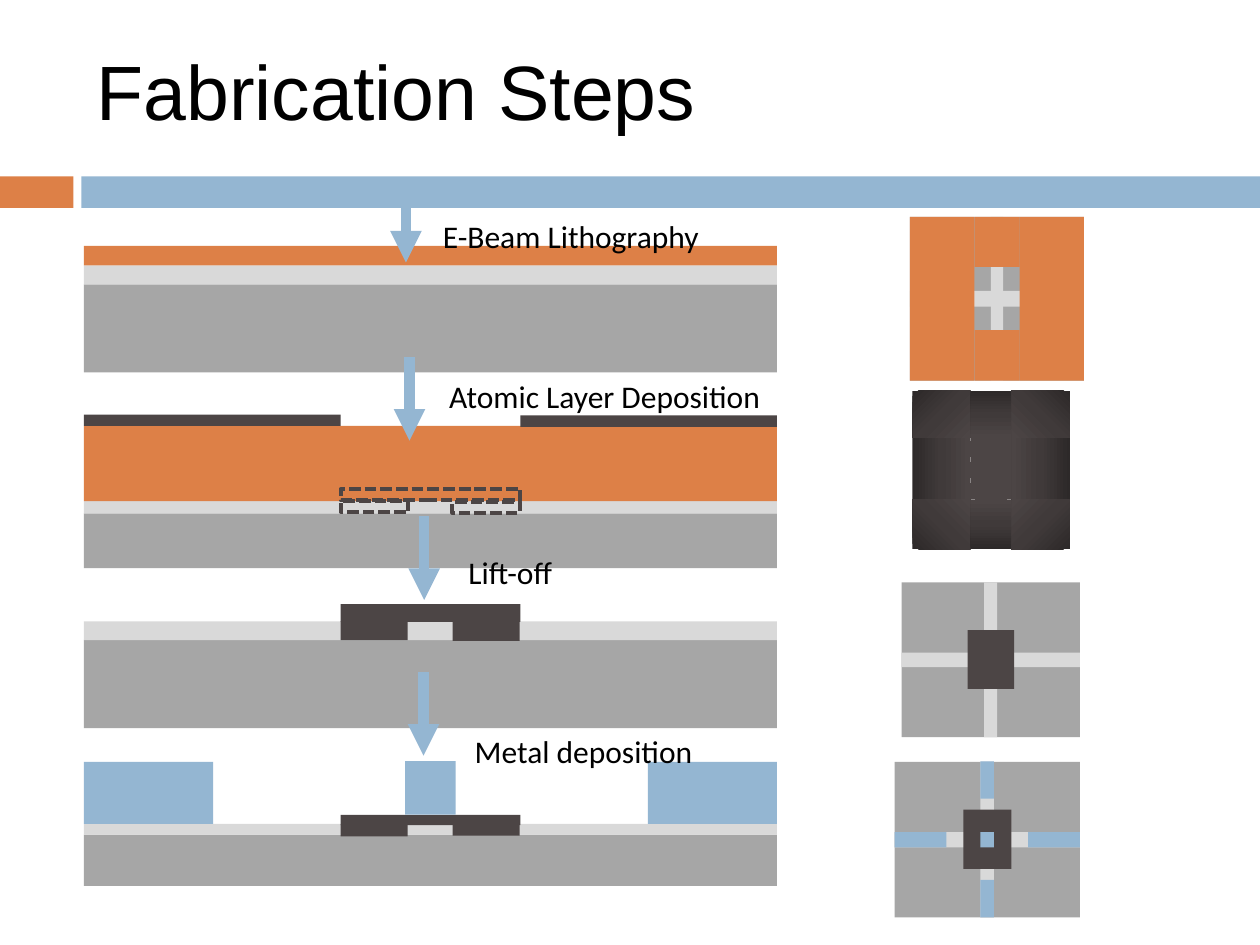
from lxml import etree
from pptx import Presentation
from pptx.dml.color import RGBColor
from pptx.enum.dml import MSO_LINE
from pptx.enum.shapes import MSO_CONNECTOR, MSO_SHAPE
from pptx.enum.text import MSO_ANCHOR, MSO_AUTO_SIZE, PP_ALIGN
from pptx.oxml import parse_xml
from pptx.oxml.ns import nsdecls, qn
from pptx.util import Pt

COLORS = {
    "resist": "DD8047", "metal": "94B6D2", "silicon": "A6A6A6",
    "device": "D9D9D9", "ald": "4C4545", "text": "000000",
}
SHADE = [(0, "2D2929"), (50, "403A3A"), (100, "4C4545")]

# Side views: full-width layers (material, top, height), then
# smaller parts (material, left, top, width, height)
SIDE_LEFT, SIDE_WIDTH = 48, 396
GATE_LEFT, GATE_WIDTH = 194.6, 102.8
RIGHT_LEG = 258.6
SIDE_VIEWS = [
    ([("silicon", 162.5, 50.4), ("device", 151.7, 10.8), ("resist", 140.6, 11.1)], []),
    ([("silicon", 293.4, 31.3), ("device", 286.4, 7), ("resist", 243.4, 43)],
     [("ald", SIDE_LEFT, 236.9, 146.7, 6.5), ("ald", 297.4, 237.4, 146.6, 6.5),
      ("outline", GATE_LEFT, 279.4, GATE_WIDTH, 6.5),
      ("outline", GATE_LEFT, 286.5, 38.8, 6), ("outline", 258.4, 287, 38.8, 6)]),
    ([("silicon", 365.7, 50.4), ("device", 355, 10.8)],
     [("ald", GATE_LEFT, 345.3, GATE_WIDTH, 10.1),
      ("ald", GATE_LEFT, 355, 38.4, 10.8), ("ald", RIGHT_LEG, 355.5, 38.4, 10.8)]),
    ([("silicon", 476.9, 29.4), ("device", 470.8, 6.2)],
     [("ald", GATE_LEFT, 465.7, GATE_WIDTH, 5.8),
      ("ald", GATE_LEFT, 471, 38.4, 7), ("ald", RIGHT_LEG, 471, 38.4, 6.5),
      ("metal", SIDE_LEFT, 435.4, 73.8, 35.4), ("metal", 370.2, 435.4, 73.8, 35.4),
      ("metal", 231.6, 435, 28.8, 30.5)]),
]

# Top views: chip (left, top, width, height), horizontal wire (top, height),
# vertical wire (left, width), then the parts on top
TOP_VIEWS = [
    ((520, 124, 99.4, 93.6), (166.3, 8.9), (566.2, 7.1),
     [("resist", 520, 124, 36.9, 93.6), ("resist", 582.7, 124, 36.7, 93.6),
      ("resist", 556.9, 124, 25.8, 28.6), ("resist", 556.9, 188.6, 25.8, 29)]),
    ((515.2, 332.8, 101.9, 88.4), (372.9, 8.3), (562.4, 7.4),
     [("ald", 552.9, 360, 26.6, 33.7)]),
    ((511.2, 435.4, 105.9, 88.9), (475.5, 8.7), (560.2, 7.7),
     [("ald", 550.5, 462.7, 27.4, 33.9),
      ("metal", 511.2, 475.5, 29.6, 8.7), ("metal", 587.5, 475.5, 29.6, 8.7),
      ("metal", 560.2, 435, 7.7, 21.4), ("metal", 560.2, 502.8, 7.7, 21.4),
      ("metal", 560.2, 475.5, 7.7, 8.7)]),
]

# Coated top view: grid edges and the shading angle of each cell
COAT_X = [521.3, 554.5, 578, 611.4]
COAT_Y = [223.2, 250.3, 285.6, 314]
COAT_ANGLES = [[45, 90, 135], [0, None, 180], [315, 270, 225]]

# Steps: label, arrow x, arrow top, label left, label top, label width
ARROW_LENGTH = 47.8
STEPS = [
    ("E-Beam Lithography", 232, 102.2, 246, 120.4, 168),
    ("Atomic Layer Deposition", 234, 204, 249.6, 212, 204),
    ("Lift-off", 242.4, 295, 260.6, 312.6, 70),
    ("Metal deposition", 242, 384, 264.2, 414.9, 149),
]


def rgb(name):
    return RGBColor.from_string(COLORS[name])


def dash(rect, width):
    rect.line.color.rgb = rgb("ald")
    rect.line.width = Pt(width)
    rect.line.dash_style = MSO_LINE.SQUARE_DOT


def add_rect(shapes, material, *box):
    rect = shapes.add_shape(MSO_SHAPE.RECTANGLE, *map(Pt, box))
    rect.shadow.inherit = False
    if material == "outline":
        rect.fill.background()
        dash(rect, 2.25)
    else:
        rect.fill.solid()
        rect.fill.fore_color.rgb = rgb(material)
        rect.line.fill.background()
    return rect


def shade(rect, angle):
    stops = "".join(f'<a:gs pos="{pos * 1000}"><a:srgbClr val="{color}"/></a:gs>'
                    for pos, color in SHADE)
    gradient = parse_xml(f'<a:gradFill {nsdecls("a")} rotWithShape="1"><a:gsLst>{stops}</a:gsLst>'
                         f'<a:lin ang="{angle * 60000}" scaled="0"/></a:gradFill>')
    properties = rect._element.spPr
    properties.replace(properties.find(qn("a:solidFill")), gradient)


def add_arrow(shapes, x, top):
    arrow = shapes.add_connector(MSO_CONNECTOR.STRAIGHT, Pt(x), Pt(top), Pt(x), Pt(top + ARROW_LENGTH))
    arrow.line.color.rgb = rgb("metal")
    arrow.line.width = Pt(6)
    etree.SubElement(arrow.line._get_or_add_ln(), qn("a:tailEnd"), type="triangle")
    etree.SubElement(arrow._element.spPr, qn("a:effectLst"))


def set_font(paragraph, name, size):
    paragraph.font.name = name
    paragraph.font.size = Pt(size)
    paragraph.font.color.rgb = rgb("text")
    paragraph.alignment = PP_ALIGN.LEFT


prs = Presentation()
prs.slide_width, prs.slide_height = Pt(720), Pt(540)
slide = prs.slides.add_slide(prs.slide_layouts[5])

# Title and band
title = slide.shapes.title
title.left, title.top, title.width, title.height = map(Pt, (48, 6, 648, 90))
title.text_frame.text = "Fabrication Steps"
title.text_frame.vertical_anchor = MSO_ANCHOR.MIDDLE
set_font(title.text_frame.paragraphs[0], "Arial", 44)
add_rect(slide.shapes, "resist", 0, 100.8, 42, 18)
add_rect(slide.shapes, "metal", 46.5, 100.8, 673.5, 18)

# Side views
for layers, parts in SIDE_VIEWS:
    side = slide.shapes.add_group_shape().shapes
    for material, top, height in layers:
        add_rect(side, material, SIDE_LEFT, top, SIDE_WIDTH, height)
    for part in parts:
        add_rect(side, *part)

# Top views
for chip, (wire_top, wire_height), (wire_left, wire_width), parts in TOP_VIEWS:
    left, top, width, height = chip
    view = slide.shapes.add_group_shape().shapes
    add_rect(view, "silicon", *chip)
    add_rect(view, "device", left, wire_top, width, wire_height)
    add_rect(view, "device", wire_left, top, wire_width, height)
    for part in parts:
        add_rect(view, *part)

# Coated top view
coat = slide.shapes.add_group_shape().shapes
for row, angles in enumerate(COAT_ANGLES):
    for col, angle in enumerate(angles):
        x, y = COAT_X[col], COAT_Y[row]
        cell = add_rect(coat, "ald", x, y, COAT_X[col + 1] - x, COAT_Y[row + 1] - y)
        if angle is None:
            dash(cell, 3)
        else:
            shade(cell, angle)

# Step arrows and labels
for step, arrow_x, arrow_top, left, top, width in STEPS:
    add_arrow(slide.shapes, arrow_x, arrow_top)
    label = slide.shapes.add_textbox(Pt(left), Pt(top), Pt(width), Pt(29)).text_frame
    label.word_wrap = True
    label.auto_size = MSO_AUTO_SIZE.SHAPE_TO_FIT_TEXT
    label.text = step
    set_font(label.paragraphs[0], "Calibri", 18)

prs.save("out.pptx")
